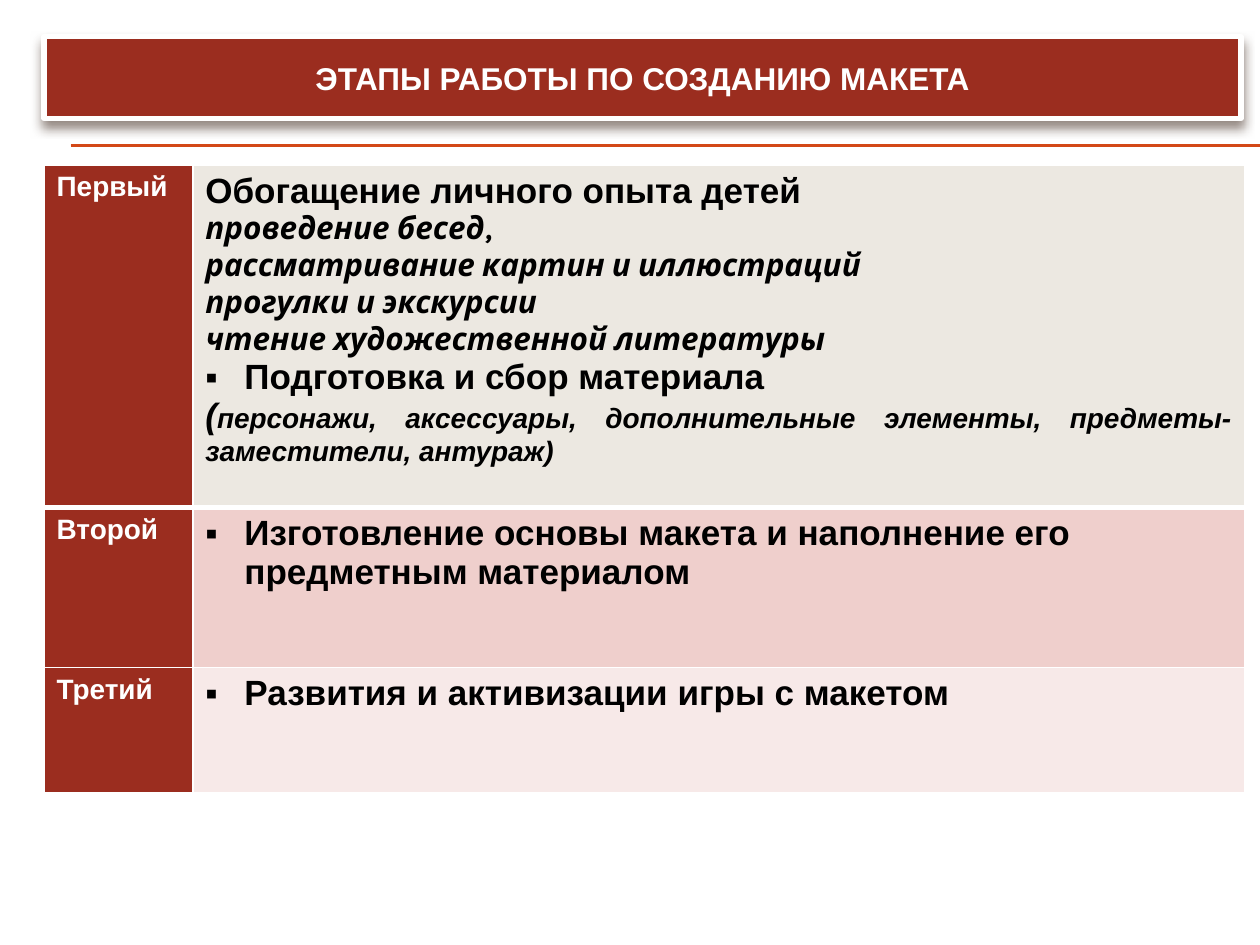
from dataclasses import dataclass

from lxml import etree
from pptx import Presentation
from pptx.dml.color import RGBColor
from pptx.enum.shapes import MSO_CONNECTOR
from pptx.enum.text import MSO_ANCHOR, PP_ALIGN
from pptx.oxml.ns import qn
from pptx.util import Inches, Pt

STRAIGHT = MSO_CONNECTOR.STRAIGHT
MIDDLE = MSO_ANCHOR.MIDDLE
LEFT, CENTER, JUSTIFY = PP_ALIGN.LEFT, PP_ALIGN.CENTER, PP_ALIGN.JUSTIFY
TITLE_ONLY = 5


@dataclass(frozen=True)
class Theme:
    accent: str = "9B2D1F"
    rule: str = "D34817"
    shadow: str = "4E3B30"
    light: str = "FFFFFF"
    dark: str = "000000"
    row_fills: tuple = ("ECE8E1", "EFCFCC", "F7E9E8")
    font: str = "Arial"
    accent_font: str = "Karla"
    heading: int = 20
    detail: int = 18
    label: int = 16


THEME = Theme()


@dataclass(frozen=True)
class Line:
    wording: tuple
    sizes: tuple = (THEME.heading,)
    font: str = THEME.font
    color: str = THEME.dark
    italic: bool = False
    bullet: bool = False
    align: PP_ALIGN = LEFT


def detail(text):
    return Line((text,), (THEME.detail,), THEME.accent_font, italic=True)


def task(text, align=LEFT):
    return Line((text,), bullet=True, align=align)


STAGES = (
    ("Первый", 2.72, (
        Line(("Обогащение личного опыта детей",)),
        detail("проведение бесед,"),
        detail("рассматривание картин и иллюстраций"),
        detail("прогулки и экскурсии"),
        detail("чтение художественной литературы"),
        task("Подготовка и сбор материала", JUSTIFY),
        Line(("(", "персонажи, аксессуары, дополнительные элементы, "
              "предметы-заместители, антураж)"),
             (THEME.heading, THEME.label), italic=True, align=JUSTIFY),
    )),
    ("Второй", 1.27, (
        task("Изготовление основы макета и наполнение его предметным материалом"),
    )),
    ("Третий", 0.99, (task("Развития и активизации игры с макетом"),)),
)


def rgb(color):
    return RGBColor.from_string(color)


def add_xml(parent, tag, **attributes):
    return etree.SubElement(parent, qn(tag), {k: str(v) for k, v in attributes.items()})


def add_bullet(paragraph):
    properties = paragraph._p.get_or_add_pPr()
    properties.set("marL", str(Inches(0.31)))
    properties.set("indent", str(-Inches(0.31)))
    add_xml(properties, "a:buFont", typeface=THEME.font)
    add_xml(properties, "a:buChar", char="▪")


def write_lines(frame, lines):
    frame.word_wrap = True
    frame.text = "\n".join("" for _ in lines)
    for paragraph, line in zip(frame.paragraphs, lines):
        paragraph.alignment = line.align
        if line.bullet:
            add_bullet(paragraph)
        for text, size in zip(line.wording, line.sizes):
            run = paragraph.add_run()
            run.text = text
            run.font.name = line.font
            run.font.size = Pt(size)
            run.font.bold = True
            run.font.italic = line.italic
            run.font.color.rgb = rgb(line.color)


def place_title(slide, left, top, width, height):
    title = slide.shapes.title
    title.left, title.top, title.width, title.height = left, top, width, height
    title.fill.solid()
    title.fill.fore_color.rgb = rgb(THEME.accent)
    title.line.color.rgb = rgb(THEME.light)
    title.line.width = Pt(3)
    effects = add_xml(title._element.spPr, "a:effectLst")
    shadow = add_xml(effects, "a:outerShdw", blurRad=Pt(6), dist=Pt(4),
                     dir=90 * 60000, algn="ctr", rotWithShape=0)
    add_xml(add_xml(shadow, "a:srgbClr", val=THEME.shadow), "a:alpha", val=60000)
    write_lines(title.text_frame, [Line(("ЭТАПЫ РАБОТЫ ПО СОЗДАНИЮ МАКЕТА",),
                                        (THEME.detail,), color=THEME.light, align=CENTER)])
    title.text_frame.vertical_anchor = MIDDLE


def place_rules(slide, left, top, width, gap):
    for y in (top, top + gap):
        rule = slide.shapes.add_connector(STRAIGHT, left, y, left + width, y)
        rule.line.color.rgb = rgb(THEME.rule)
        rule.line.width = Pt(0.75)
        add_xml(rule._element.spPr, "a:effectLst")


def style_cell(cell, fill, bottom_width):
    properties = cell._tc.get_or_add_tcPr()
    for side, width in (("L", 1), ("R", 1), ("T", 1), ("B", bottom_width)):
        border = add_xml(properties, f"a:ln{side}", w=Pt(width))
        add_xml(add_xml(border, "a:solidFill"), "a:srgbClr", val=THEME.light)
    cell.fill.solid()
    cell.fill.fore_color.rgb = rgb(fill)


def place_stages(slide, left, top, width, label_width):
    total = Inches(sum(height for _, height, _ in STAGES))
    table = slide.shapes.add_table(len(STAGES), 2, left, top, width, total).table
    table.columns[0].width = label_width
    table.columns[1].width = width - label_width
    for index, (label, height, lines) in enumerate(STAGES):
        table.rows[index].height = Inches(height)
        bottom_width = 3 if index == 0 else 1
        name, content = table.cell(index, 0), table.cell(index, 1)
        style_cell(name, THEME.accent, bottom_width)
        style_cell(content, THEME.row_fills[index], bottom_width)
        write_lines(name.text_frame, [Line((label,), (THEME.label,), color=THEME.light)])
        write_lines(content.text_frame, lines)


def main():
    presentation = Presentation()
    presentation.slide_width, presentation.slide_height = Inches(10), Inches(7.5)
    slide = presentation.slides.add_slide(presentation.slide_layouts[TITLE_ONLY])
    place_rules(slide, Inches(0.56), Inches(1.15), Inches(9.44), Inches(0.01))
    place_title(slide, Inches(0.35), Inches(0.29), Inches(9.5), Inches(0.65))
    place_stages(slide, Inches(0.35), Inches(1.31), Inches(9.53), Inches(1.18))
    presentation.save("out.pptx")


if __name__ == "__main__":
    main()
